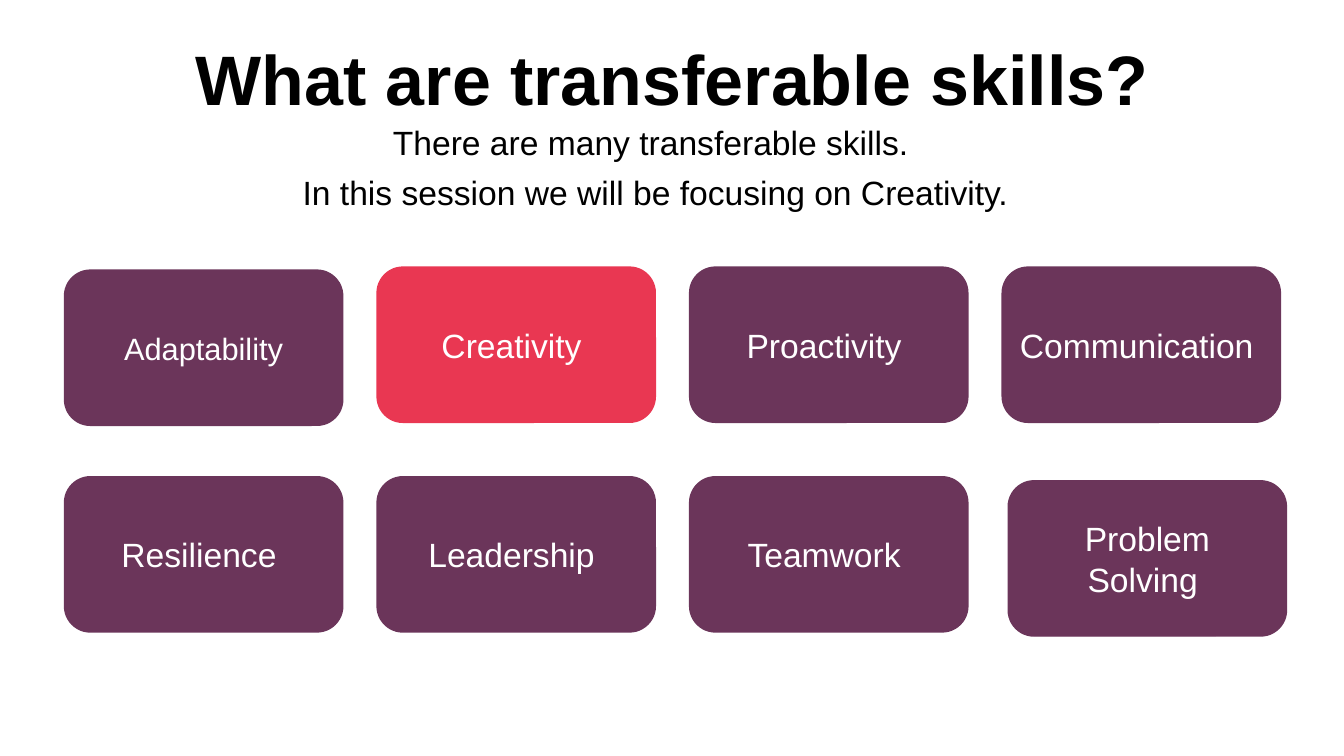
import dataclasses

import lxml.etree
import pptx
import pptx.dml.color
import pptx.enum.shapes
import pptx.enum.text
import pptx.oxml.ns
import pptx.util


@dataclasses.dataclass(frozen=True)
class Theme:
    font: str = "Arial"
    ink: str = "000000"
    card_text: str = "FFFFFF"
    card: str = "6B355A"
    focus: str = "E93752"
    title_size: int = 50
    text_size: int = 24
    small_size: int = 22


class SkillsSlide:
    # Card grid, in inches
    LEFT, TOP = 0.64, 2.65
    COLUMN, ROW = 3.1, 2.08
    CARD_WIDTH, CARD_HEIGHT = 2.76, 1.54

    def __init__(self, presentation, theme):
        self.theme = theme
        self.slide = presentation.slides.add_slide(presentation.slide_layouts[1])

    def format(self, paragraph, size, color, bold=False):
        paragraph.alignment = pptx.enum.text.PP_ALIGN.CENTER
        paragraph.font.name = self.theme.font
        paragraph.font.size = pptx.util.Pt(size)
        paragraph.font.bold = bold
        paragraph.font.color.rgb = pptx.dml.color.RGBColor.from_string(color)

    def place(self, holder, left, top, width, height):
        holder.left, holder.top, holder.width, holder.height = map(
            pptx.util.Inches, (left, top, width, height))
        frame = holder.text_frame
        frame.word_wrap = True
        frame.auto_size = pptx.enum.text.MSO_AUTO_SIZE.NONE
        frame.vertical_anchor = pptx.enum.text.MSO_ANCHOR.TOP
        return frame

    def title(self, text):
        frame = self.place(self.slide.shapes.title, 0.92, 0.4, 11.5, 1.45)
        frame.text = text
        heading = frame.paragraphs[0]
        heading.line_spacing = 0.9
        self.format(heading, self.theme.title_size, self.theme.ink, bold=True)

    def body(self, lines):
        frame = self.place(self.slide.placeholders[1], 0.75, 1.2, 11.5, 4.38)
        frame.text = "\n".join(lines)
        for index, line in enumerate(frame.paragraphs):
            properties = line._p.get_or_add_pPr()
            properties.set("marL", "0")
            properties.set("indent", "0")
            lxml.etree.SubElement(properties, pptx.oxml.ns.qn("a:buNone"))
            line.line_spacing = 0.9
            line.space_before = pptx.util.Pt(10 if index else 0)
            self.format(line, self.theme.text_size, self.theme.ink)

    def card(self, column, row, skill, color, size, shift=(0, 0)):
        left = self.LEFT + column * self.COLUMN + shift[0]
        top = self.TOP + row * self.ROW + shift[1]
        card = self.slide.shapes.add_shape(
            pptx.enum.shapes.MSO_SHAPE.ROUNDED_RECTANGLE,
            *map(pptx.util.Inches, (left, top, self.CARD_WIDTH, self.CARD_HEIGHT)))
        card.shadow.inherit = False
        fill = pptx.dml.color.RGBColor.from_string(color)
        card.fill.solid()
        card.fill.fore_color.rgb = fill
        card.line.color.rgb = fill
        card.line.width = pptx.util.Pt(1)
        frame = card.text_frame
        frame.word_wrap = True
        frame.vertical_anchor = pptx.enum.text.MSO_ANCHOR.MIDDLE
        frame.text = skill
        self.format(frame.paragraphs[0], size, self.theme.card_text)


def main():
    presentation = pptx.Presentation()
    presentation.slide_width = pptx.util.Inches(13.33)
    presentation.slide_height = pptx.util.Inches(7.5)
    theme = Theme()
    page = SkillsSlide(presentation, theme)

    # Heading and introduction
    page.title("What are transferable skills?")
    page.body(["There are many transferable skills. ",
               "In this session we will be focusing on Creativity."])

    # Skill cards, with the session's focus highlighted
    skills = [
        ["Adaptability", "Creativity ", "Proactivity ", "Communication "],
        ["Resilience ", "Leadership ", "Teamwork ", "Problem Solving "],
    ]
    colors = {"Creativity ": theme.focus}
    sizes = {"Adaptability": theme.small_size}
    shifts = {"Adaptability": (0, 0.03), "Problem Solving ": (0.06, 0.04)}
    for row, names in enumerate(skills):
        for column, skill in enumerate(names):
            page.card(column, row, skill, colors.get(skill, theme.card),
                      sizes.get(skill, theme.text_size), shifts.get(skill, (0, 0)))

    presentation.save("out.pptx")


if __name__ == "__main__":
    main()
